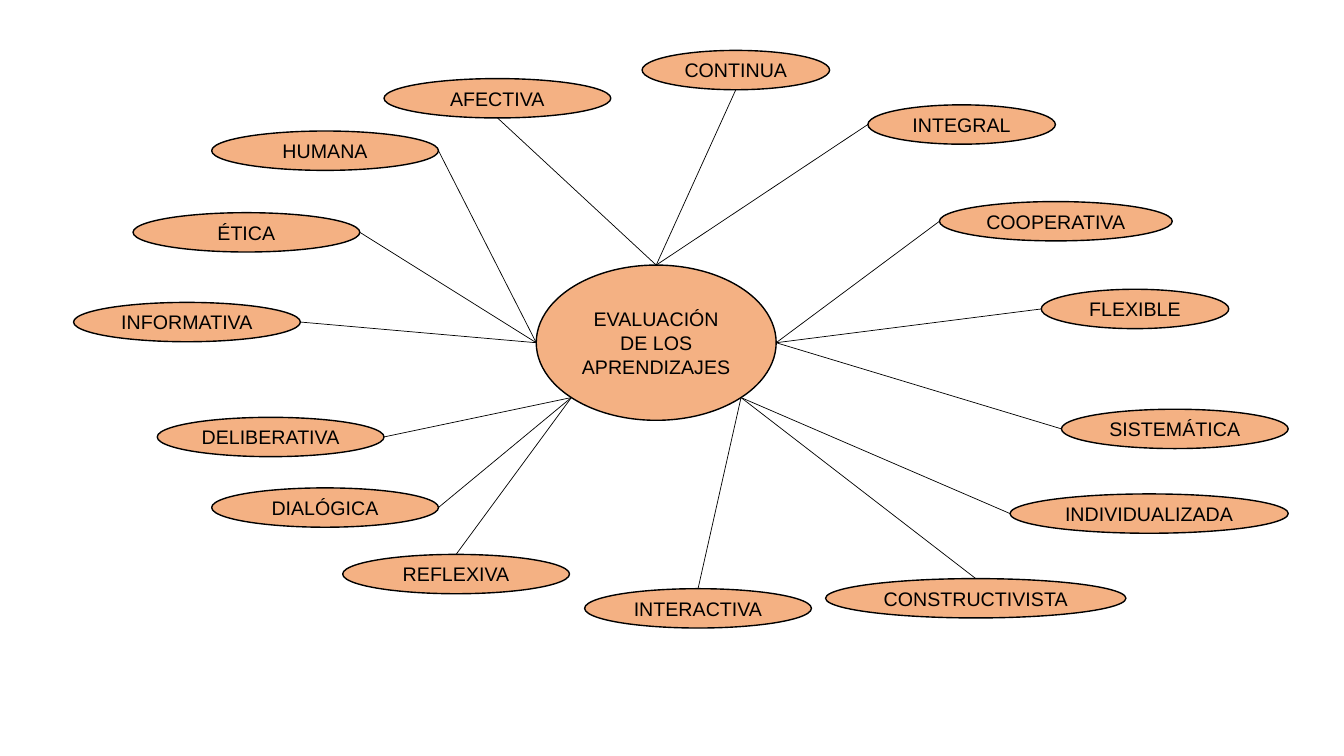
import math

import pptx
import pptx.util
import pptx.dml.color
import pptx.enum.shapes
import pptx.enum.text
import pptx.oxml.ns
import lxml.etree

HUES = {"fill": "F4B183", "ink": "000000", "back": "FFFFFF"}
COLS, ROWS = 133.33, 75  # grid cells across and down the slide
HIGH = 3.9  # rows in each outer oval

# Points on an oval's rim, as offsets from its centre in half sizes
DIAG = math.sqrt(0.5)
RIM = {
    "top": (0, -1), "right": (1, 0), "foot": (0, 1), "left": (-1, 0),
    "low right": (DIAG, DIAG), "low left": (-DIAG, DIAG),
}

HUB = ("EVALUACIÓN DE LOS APRENDIZAJES", 53.2, 26.3, 23.8, 15.4)

# Text, left, top, width, rim point on the hub, rim point on the oval
TRAITS = [
    ("CONTINUA", 63.7, 5, 18.6, "top", "foot"),
    ("INTEGRAL", 86.1, 10.4, 18.6, "top", "left"),
    ("COOPERATIVA", 93.2, 20, 23.1, "right", "left"),
    ("FLEXIBLE", 103.3, 28.7, 18.6, "right", "left"),
    ("SISTEMÁTICA", 105.3, 40.6, 22.5, "right", "left"),
    ("INDIVIDUALIZADA", 100.2, 49, 27.6, "low right", "left"),
    ("CONSTRUCTIVISTA", 81.9, 57.4, 29.8, "low right", "top"),
    ("INTERACTIVA", 58, 58.4, 22.5, "low right", "top"),
    ("REFLEXIVA", 34, 55, 22.5, "low left", "top"),
    ("DIALÓGICA", 21, 48.4, 22.5, "low left", "right"),
    ("DELIBERATIVA", 15.6, 41.4, 22.5, "low left", "right"),
    ("INFORMATIVA", 7.3, 30, 22.5, "left", "right"),
    ("ÉTICA", 13.2, 21.1, 22.5, "left", "right"),
    ("HUMANA", 21, 13, 22.5, "left", "right"),
    ("AFECTIVA", 38.1, 7.8, 22.5, "top", "foot"),
]


def tint(name):
    return pptx.dml.color.RGBColor.from_string(HUES[name])


def oval(slide, text, left, top, width, height):
    shape = slide.shapes.add_shape(
        pptx.enum.shapes.MSO_SHAPE.OVAL,
        round(left), round(top), round(width), round(height))
    shape.shadow.inherit = False
    shape.fill.solid()
    shape.fill.fore_color.rgb = tint("fill")
    shape.line.color.rgb = tint("ink")
    shape.line.width = pptx.util.Pt(1)
    frame = shape.text_frame
    frame.word_wrap = True
    frame.vertical_anchor = pptx.enum.text.MSO_ANCHOR.MIDDLE
    para = frame.paragraphs[0]
    para.text = text
    para.alignment = pptx.enum.text.PP_ALIGN.CENTER
    para.font.name = "Arial"
    para.font.size = pptx.util.Pt(14)
    para.font.color.rgb = tint("ink")
    return shape


def point(shape, side):
    across, down = RIM[side]
    return (round(shape.left + shape.width * (1 + across) / 2),
            round(shape.top + shape.height * (1 + down) / 2))


def link(slide, start, end):
    line = slide.shapes.add_connector(
        pptx.enum.shapes.MSO_CONNECTOR.STRAIGHT, *start, *end)
    line.line.color.rgb = tint("ink")
    line.line.width = pptx.util.Pt(0.5)
    lxml.etree.SubElement(line._element.spPr, pptx.oxml.ns.qn("a:effectLst"))


def web(slide, box):
    """Draw the hub, its ring of traits and the lines between them."""
    left, top, width, height = box
    col, row = width / COLS, height / ROWS

    def place(text, x, y, wide, high):
        return oval(slide, text, left + x * col, top + y * row,
                    wide * col, high * row)

    # Ovals
    hub = place(*HUB)
    ring = [place(*trait[:4], HIGH) for trait in TRAITS]

    # Lines
    for shape, trait in zip(ring, TRAITS):
        link(slide, point(hub, trait[4]), point(shape, trait[5]))


def main():
    deck = pptx.Presentation()
    deck.slide_width = pptx.util.Inches(13.33)
    deck.slide_height = pptx.util.Inches(7.5)
    slide = deck.slides.add_slide(deck.slide_layouts[6])
    slide.background.fill.solid()
    slide.background.fill.fore_color.rgb = tint("back")
    web(slide, (0, 0, deck.slide_width, deck.slide_height))
    deck.save("out.pptx")


if __name__ == "__main__":
    main()
